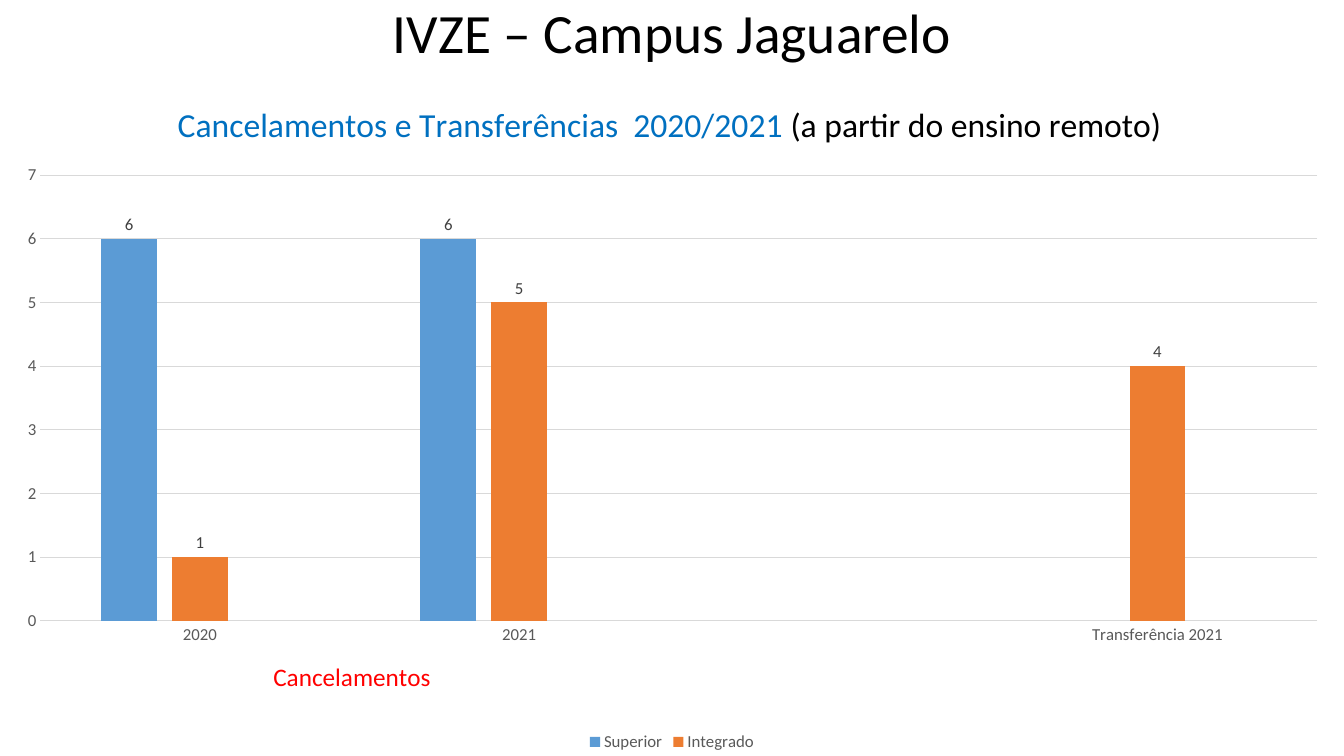
from dataclasses import dataclass

from lxml import etree
from pptx import Presentation
from pptx.chart.data import CategoryChartData
from pptx.dml.color import RGBColor
from pptx.enum import chart as ch, text
from pptx.oxml import ns
from pptx.util import Pt

FONT = "Calibri"
GREY = "595959"
RULE = "D9D9D9"


@dataclass(frozen=True)
class Level:
    name: str
    counts: tuple
    color: str


LEVELS = (
    Level("Superior", (6, 6, None, None), "5B9BD5"),
    Level("Integrado", (1, 5, None, 4), "ED7D31"),
    Level("Series 3", (None, None, None, None), "A5A5A5"),
)
PERIODS = ("2020", "2021", "", "Transferência 2021")


def rgb(code: str) -> RGBColor:
    return RGBColor.from_string(code)


def style_font(font, size: float, color: str) -> None:
    font.name = FONT
    font.size = Pt(size)
    font.bold = False
    font.color.rgb = rgb(color)


def rule(line) -> None:
    line.color.rgb = rgb(RULE)
    line.width = Pt(0.75)


def place(element, index: int, **fractions: float) -> None:
    for previous in element.findall(ns.qn("c:layout")):
        element.remove(previous)
    layout = etree.Element(ns.qn("c:layout"))
    manual = etree.SubElement(layout, ns.qn("c:manualLayout"))
    if "w" in fractions:
        etree.SubElement(manual, ns.qn("c:layoutTarget"), val="inner")
    for mode in ("xMode", "yMode"):
        etree.SubElement(manual, ns.qn(f"c:{mode}"), val="edge")
    for key, fraction in fractions.items():
        etree.SubElement(manual, ns.qn(f"c:{key}"), val=str(fraction))
    element.insert(index, layout)


def write_title(title, size: float, runs: tuple, x: float, y: float) -> None:
    paragraph = title.text_frame.paragraphs[0]
    for wording, color in runs:
        run = paragraph.add_run()
        run.text = wording
        style_font(run.font, size, color)
    place(title.element, 1, x=x, y=y)


def add_heading(slide) -> None:
    heading = slide.shapes.title
    heading.left, heading.top = Pt(66), Pt(0)
    heading.width, heading.height = Pt(828), Pt(50.4)
    frame = heading.text_frame
    frame.text = "IVZE – Campus Jaguarelo"
    frame.vertical_anchor = text.MSO_ANCHOR.MIDDLE
    paragraph = frame.paragraphs[0]
    paragraph.alignment = text.PP_ALIGN.CENTER
    paragraph.line_spacing = 0.9
    style_font(paragraph.font, 39.6, "000000")


def style_axes(chart) -> None:
    periods, counts = chart.category_axis, chart.value_axis
    for axis in (periods, counts):
        axis.major_tick_mark = axis.minor_tick_mark = ch.XL_TICK_MARK.NONE
        style_font(axis.tick_labels.font, 12, GREY)
    rule(periods.format.line)
    periods.has_major_gridlines = False
    write_title(periods.axis_title, 18, (("Cancelamentos", "FF0000"),), 0.2, 0.85)
    counts.minimum_scale, counts.maximum_scale, counts.major_unit = 0, 7, 1
    counts.format.line.fill.background()
    rule(counts.major_gridlines.format.line)


def style_columns(plot) -> None:
    plot.gap_width, plot.overlap = 219, -27
    plot.vary_by_categories = False
    for level, columns in zip(LEVELS, plot.series):
        columns.format.fill.solid()
        columns.format.fill.fore_color.rgb = rgb(level.color)
        labels = columns.data_labels
        labels.show_value = True
        labels.position = ch.XL_LABEL_POSITION.OUTSIDE_END
        style_font(labels.font, 12, "404040")


def add_legend(chart) -> None:
    chart.has_legend = True
    chart.legend.position = ch.XL_LEGEND_POSITION.BOTTOM
    chart.legend.include_in_layout = False
    style_font(chart.legend.font, 12, GREY)
    entry = etree.Element(ns.qn("c:legendEntry"))
    etree.SubElement(entry, ns.qn("c:idx"), val="2")
    etree.SubElement(entry, ns.qn("c:delete"), val="1")
    chart.element.find(".//" + ns.qn("c:legendPos")).addnext(entry)


def add_cancellations(slide) -> None:
    data = CategoryChartData()
    data.categories = PERIODS
    for level in LEVELS:
        data.add_series(level.name, level.counts)
    chart = slide.shapes.add_chart(
        ch.XL_CHART_TYPE.COLUMN_CLUSTERED, Pt(0), Pt(57.6), Pt(960), Pt(482.4), data
    ).chart
    style_font(chart.font, 10, "000000")
    chart.has_title = True
    write_title(
        chart.chart_title,
        24,
        (
            ("Cancelamentos e Transferências  2020/2021 ", "0070C0"),
            ("(a partir do ensino remoto)", "000000"),
        ),
        0.13,
        0.03,
    )
    style_axes(chart)
    style_columns(chart.plots[0])
    add_legend(chart)
    plot_area = chart.element.find(".//" + ns.qn("c:plotArea"))
    place(plot_area, 0, x=0.03, y=0.14, w=0.95, h=0.66)


def main() -> None:
    deck = Presentation()
    deck.slide_width, deck.slide_height = Pt(960), Pt(540)
    slide = deck.slides.add_slide(deck.slide_layouts[5])
    add_heading(slide)
    add_cancellations(slide)
    deck.save("out.pptx")


if __name__ == "__main__":
    main()
